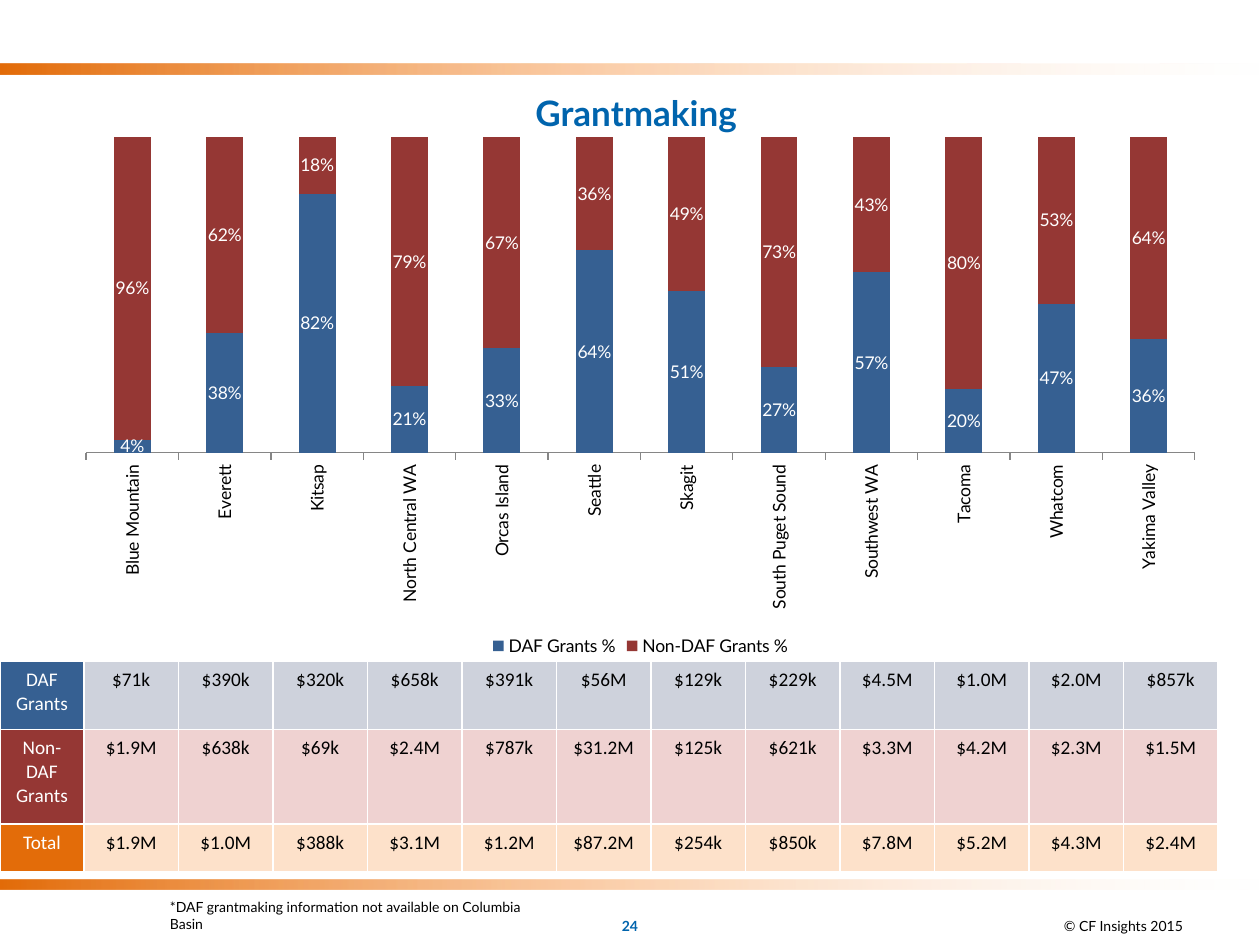
import pptx
import pptx.chart.data
import pptx.dml.color
import pptx.enum.chart
import pptx.enum.shapes
import pptx.enum.text
import pptx.oxml
import pptx.oxml.ns
import pptx.util

Pt = pptx.util.Pt
qn = pptx.oxml.ns.qn
ALIGN = pptx.enum.text.PP_ALIGN
ANCHOR = pptx.enum.text.MSO_ANCHOR
BLUE, RED, ORANGE, TITLE_BLUE = "366092", "953734", "E36C09", "0064AD"
BLACK, WHITE = "000000", "FFFFFF"

CHAPTERS = ["Blue Mountain", "Everett", "Kitsap", "North Central WA", "Orcas Island", "Seattle",
            "Skagit", "South Puget Sound", "Southwest WA", "Tacoma", "Whatcom", "Yakima Valley"]
DAF_SHARE = [0.04, 0.38, 0.82, 0.21, 0.33, 0.64, 0.51, 0.27, 0.57, 0.2, 0.47, 0.36]
SERIES = [("DAF Grants %", DAF_SHARE, BLUE),
          ("Non-DAF Grants %", [round(1 - v, 2) for v in DAF_SHARE], RED)]
# heading, heading fill, body fill, row height, amounts
GRANT_ROWS = [
    ("DAF Grants", BLUE, "CED2DC", 39,
     "$71k $390k $320k $658k $391k $56M $129k $229k $4.5M $1.0M $2.0M $857k"),
    ("Non-DAF Grants", RED, "EFD2D1", 54,
     "$1.9M $638k $69k $2.4M $787k $31.2M $125k $621k $3.3M $4.2M $2.3M $1.5M"),
    ("Total", ORANGE, "FDE1CA", 27,
     "$1.9M $1.0M $388k $3.1M $1.2M $87.2M $254k $850k $7.8M $5.2M $4.3M $2.4M"),
]


def rgb(color):
    return pptx.dml.color.RGBColor.from_string(color)


def set_font(font, color=BLACK, **values):
    for name, value in values.items():
        setattr(font, name, value)
    font.color.rgb = rgb(color)


def fill_solid(fill, color):
    fill.solid()
    fill.fore_color.rgb = rgb(color)


def drawing_xml(body):
    return pptx.oxml.parse_xml(body.replace(">", f" {pptx.oxml.ns.nsdecls('a')}>", 1))


def write(tf, text, align, **font):
    tf.word_wrap = True
    p = tf.paragraphs[0]
    p.alignment = align
    r = p.add_run()
    r.text = text
    set_font(r.font, **font)


def add_title(s, text, x, y, w, h):
    title = s.shapes.title
    for name, value in {"left": x, "top": y, "width": w, "height": h}.items():
        setattr(title, name, Pt(value))
    tf = title.text_frame
    tf.auto_size = pptx.enum.text.MSO_AUTO_SIZE.NONE
    tf.vertical_anchor = ANCHOR.MIDDLE
    write(tf, text, ALIGN.CENTER, size=Pt(20), name="Lato", bold=True, color=TITLE_BLUE)


def add_band(s, x, y, w, h):
    """Orange bar fading out to the right."""
    sp = s.shapes.add_shape(pptx.enum.shapes.MSO_SHAPE.RECTANGLE, Pt(x), Pt(y), Pt(w), Pt(h))
    sp.shadow.inherit = False
    sp.line.fill.background()
    stops = "".join(
        f'<a:gs pos="{pos}000"><a:srgbClr val="{color}"><a:alpha val="{alpha}000"/></a:srgbClr></a:gs>'
        for pos, color, alpha in [(0, ORANGE, 100), (50, "F9A661", 50), (100, "FDE1CA", 0)])
    sp.element.spPr.find(qn("a:prstGeom")).addnext(drawing_xml(
        f'<a:gradFill><a:gsLst>{stops}</a:gsLst><a:lin ang="0" scaled="0"/></a:gradFill>'))


def add_note(s, text, x, y, w, h, align=ALIGN.CENTER, anchor=ANCHOR.MIDDLE, **font):
    tf = s.shapes.add_textbox(Pt(x), Pt(y), Pt(w), Pt(h)).text_frame
    tf.vertical_anchor = anchor
    write(tf, text, align, size=Pt(8), name="Lato", **font)


def set_plot_area(chart, **fractions):
    """Fix the inner plot area, in fractions of the chart, and turn the category labels."""
    plot_area = chart.element.find(".//" + qn("c:plotArea"))
    old = plot_area.find(qn("c:layout"))
    if old is not None:
        plot_area.remove(old)
    modes = {"layoutTarget": "inner", "xMode": "edge", "yMode": "edge"}
    parts = "".join(f'<c:{k} val="{v}"/>' for k, v in {**modes, **fractions}.items())
    plot_area.insert(0, pptx.oxml.parse_xml(
        f'<c:layout {pptx.oxml.ns.nsdecls("c")}><c:manualLayout>{parts}</c:manualLayout></c:layout>'))
    body = plot_area.find(f"{qn('c:catAx')}/{qn('c:txPr')}/{qn('a:bodyPr')}")
    body.set("rot", "-5400000")
    body.set("vert", "horz")


def add_share_chart(s, x, y, w, h):
    data = pptx.chart.data.CategoryChartData(number_format="0%")
    data.categories = CHAPTERS
    for name, values, _ in SERIES:
        data.add_series(name, values)
    xl = pptx.enum.chart
    chart = s.shapes.add_chart(xl.XL_CHART_TYPE.COLUMN_STACKED_100,
                               Pt(x), Pt(y), Pt(w), Pt(h), data).chart
    set_font(chart.font, size=Pt(10), name="Calibri")
    chart.has_title = False
    chart.has_legend = True
    chart.legend.position = xl.XL_LEGEND_POSITION.BOTTOM
    chart.legend.include_in_layout = False
    set_font(chart.legend.font, size=Pt(10), name="Lato")

    values = chart.value_axis
    for name, value in {"visible": False, "has_major_gridlines": False,
                        "minimum_scale": 0, "maximum_scale": 1}.items():
        setattr(values, name, value)
    cats = chart.category_axis
    cats.major_tick_mark = xl.XL_TICK_MARK.OUTSIDE
    cats.format.line.color.rgb = rgb("868686")
    set_font(cats.tick_labels.font, size=Pt(10), name="Lato")

    plot = chart.plots[0]
    plot.gap_width, plot.overlap, plot.vary_by_categories = 150, 100, False
    for series, (_, _, color) in zip(plot.series, SERIES):
        fill_solid(series.format.fill, color)
        labels = series.data_labels
        for name, value in {"show_value": True, "position": xl.XL_LABEL_POSITION.CENTER,
                            "number_format": "0%", "number_format_is_linked": False}.items():
            setattr(labels, name, value)
        set_font(labels.font, WHITE, size=Pt(10), name="Lato")
    set_plot_area(chart, x=0.02, y=0.02, w=0.96, h=0.59)


def format_cell(cell, text, fill, color):
    write(cell.text_frame, text, ALIGN.CENTER, size=Pt(11), name="Calibri", color=color)
    tc_pr = cell._tc.get_or_add_tcPr()
    for side in ("lnL", "lnR", "lnT", "lnB"):
        tc_pr.append(drawing_xml(f'<a:{side} w="12700"><a:solidFill><a:srgbClr val="{WHITE}"/>'
                                 f'</a:solidFill></a:{side}>'))
    fill_solid(cell.fill, fill)


def add_grant_table(s, x, y, w, h, heading_w=48):
    count = len(CHAPTERS)
    table = s.shapes.add_table(len(GRANT_ROWS), count + 1, Pt(x), Pt(y), Pt(w), Pt(h)).table
    table.first_row = table.horz_banding = False
    for i, column in enumerate(table.columns):
        column.width = Pt((w - heading_w) / count if i else heading_w)
    for row, (heading, dark, light, row_h, amounts) in zip(table.rows, GRANT_ROWS):
        row.height = Pt(row_h)
        for i, (cell, text) in enumerate(zip(row.cells, [heading, *amounts.split()])):
            format_cell(cell, text, light if i else dark, BLACK if i else WHITE)


def add_grantmaking_slide(prs):
    s = prs.slides.add_slide(prs.slide_layouts[5])
    for y in (502.5, 36.5):
        add_band(s, 0, y, 720, 6)
    add_note(s, "© CF Insights 2015", 564, 518.5, 156, 21.5)
    add_title(s, "Grantmaking", 47, 48, 633, 32)
    add_grant_table(s, 0, 378, 696, 120)
    add_note(s, "*DAF grantmaking information not available on Columbia Basin",
             90, 510, 222, 27, ALIGN.LEFT, ANCHOR.TOP)
    add_share_chart(s, 36, 72, 660, 306)
    add_note(s, "24", 276, 518.5, 168, 21.5, bold=True, color=TITLE_BLUE)


def main():
    prs = pptx.Presentation()
    prs.slide_width, prs.slide_height = Pt(720), Pt(540)
    add_grantmaking_slide(prs)
    prs.save("out.pptx")


if __name__ == "__main__":
    main()
